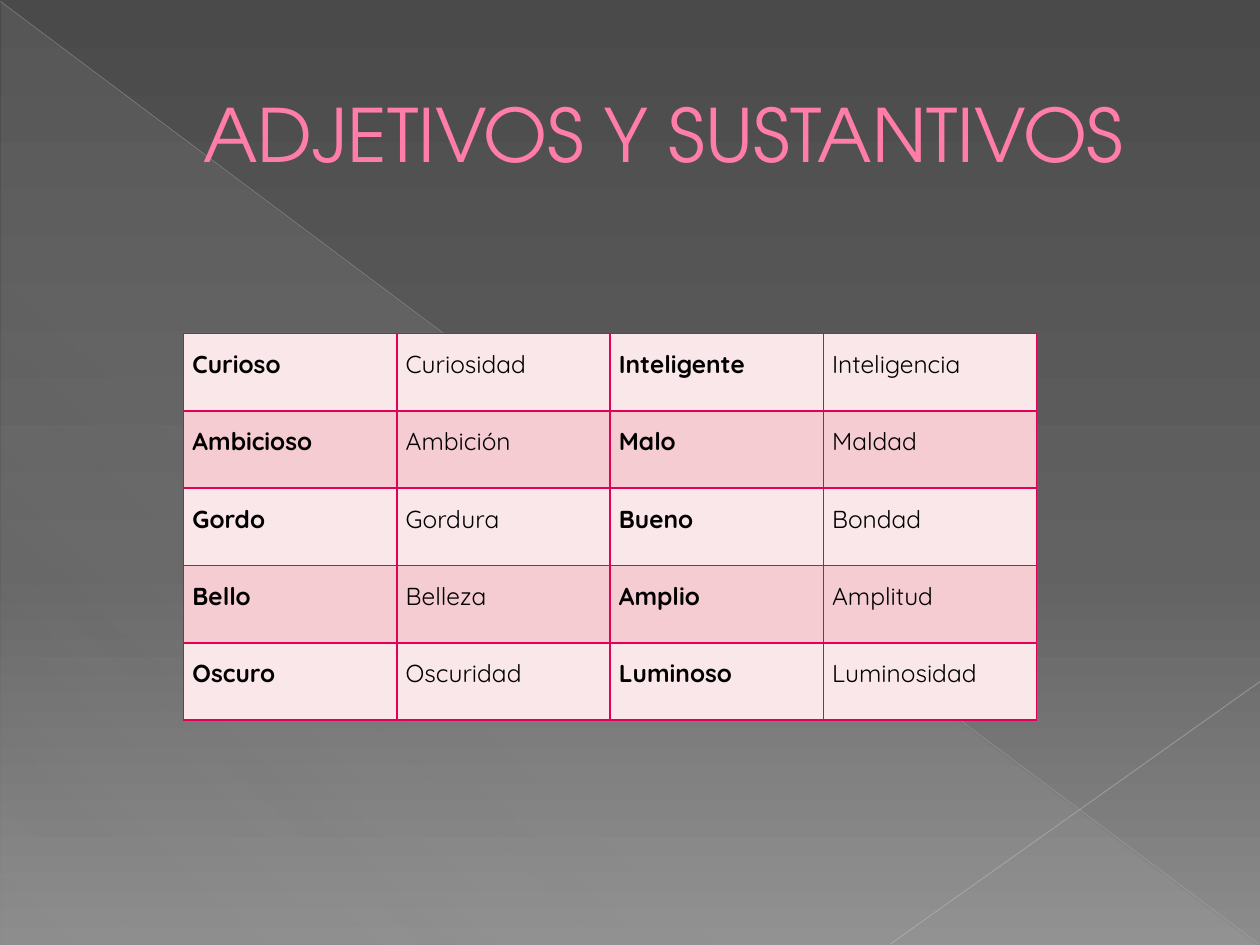
import lxml.etree
import pptx
import pptx.dml.color
import pptx.enum.shapes
import pptx.enum.text
import pptx.oxml.ns
import pptx.util

Pt = pptx.util.Pt
qn = pptx.oxml.ns.qn

WORDS = [
    ["Curioso", "Curiosidad", "Inteligente", "Inteligencia"],
    ["Ambicioso", "Ambición", "Malo", "Maldad"],
    ["Gordo", "Gordura", "Bueno", "Bondad"],
    ["Bello", "Belleza", "Amplio", "Amplitud"],
    ["Oscuro", "Oscuridad", "Luminoso", "Luminosidad"],
]
ROW_FILLS = ["FAE7EA", "F5CCD1"]
BORDER = "E40059"


def color(value):
    return pptx.dml.color.RGBColor.from_string(value)


def add_child(parent, tag, **attributes):
    child = lxml.etree.SubElement(parent, qn(tag))
    for name, value in attributes.items():
        child.set(name, str(value))
    return child


def add_color(parent, value, alpha=100):
    node = add_child(parent, "a:srgbClr", val=value)
    if alpha < 100:
        add_child(node, "a:alpha", val=alpha * 1000)


def set_gradient(fill, owner, stops, angle):
    """Fill with (position %, colour, opacity %) stops, angle clockwise in degrees."""
    fill.gradient()
    gradient = next(owner.iter(qn("a:gradFill")))
    for child in list(gradient):
        gradient.remove(child)
    stop_list = add_child(gradient, "a:gsLst")
    for position, value, alpha in stops:
        add_color(add_child(stop_list, "a:gs", pos=position * 1000), value, alpha)
    add_child(gradient, "a:lin", ang=angle * 60000, scaled=0)


def add_line(page, start, end, value, width, alpha):
    line = page.shapes.add_connector(
        pptx.enum.shapes.MSO_CONNECTOR.STRAIGHT, *map(Pt, start + end))
    line.line.width = Pt(width)
    line.line.color.rgb = color(value)
    properties = line._element.spPr
    add_child(next(properties.iter(qn("a:srgbClr"))), "a:alpha", val=alpha * 1000)
    add_child(properties, "a:effectLst")


def add_backdrop(page, left, top, width, height):
    set_gradient(page.background.fill, page._element,
                 [(0, "4A4A4A", 100), (60, "626262", 100), (100, "8C8C8C", 100)], 90)
    right, bottom = left + width, top + height
    triangle = page.shapes.add_shape(
        pptx.enum.shapes.MSO_SHAPE.RIGHT_TRIANGLE,
        *map(Pt, (left + 0.7, top + 1.2, width - 1.4, height - 1.2)))
    triangle.shadow.inherit = False
    triangle.line.fill.background()
    set_gradient(triangle.fill, triangle._element,
                 [(0, "D2D2D2", 10), (70, "D2D2D2", 8), (100, "D2D2D2", 1)], 133)
    add_line(page, (left, top + 0.7), (right - 0.7, bottom - 0.7), "BFBFBF", 0.39, 35)
    add_line(page, (right, bottom - 150.5), (right - 211, bottom - 0.7), "C6C6C6", 0.47, 45)


def add_title(page, left, top, width, height):
    box = page.shapes.add_textbox(*map(Pt, (left, top, width, height)))
    frame = box.text_frame
    frame.word_wrap = True
    frame.vertical_anchor = pptx.enum.text.MSO_ANCHOR.MIDDLE
    para = frame.paragraphs[0]
    para.alignment = pptx.enum.text.PP_ALIGN.CENTER
    para._p.get_or_add_pPr().set("marL", str(Pt(38.2)))
    span = para.add_run()
    span.text = "ADJETIVOS Y SUSTANTIVOS"
    for name, value in {"size": Pt(42), "name": "TeX Gyre Adventor"}.items():
        setattr(span.font, name, value)
    span.font.color.rgb = color("FF7DA7")
    properties = span._r.get_or_add_rPr()
    outline = add_child(properties, "a:ln", w=Pt(0.5))
    add_color(add_child(outline, "a:solidFill"), "B12761")
    properties.insert(0, outline)


def set_borders(cell):
    properties = cell._tc.get_or_add_tcPr()
    for index, side in enumerate(("a:lnL", "a:lnR", "a:lnT", "a:lnB")):
        border = add_child(properties, side, w=Pt(1))
        add_color(add_child(border, "a:solidFill"), BORDER)
        properties.insert(index, border)


def fill_cell(cell, text, fill, bold):
    margins = {"margin_left": Pt(5), "margin_right": Pt(5),
               "margin_top": 0, "margin_bottom": 0}
    for name, value in margins.items():
        setattr(cell, name, value)
    cell.fill.solid()
    cell.fill.fore_color.rgb = color(fill)
    set_borders(cell)
    para = cell.text_frame.paragraphs[0]
    para.line_spacing = 1.5
    span = para.add_run()
    span.text = text
    for name, value in {"size": Pt(14), "name": "Quicksand", "bold": bold}.items():
        setattr(span.font, name, value)
    span.font.color.rgb = color("000000")


def add_word_table(page, left, top, width, height):
    """Adjectives in bold, each followed by its noun."""
    table = page.shapes.add_table(
        len(WORDS), len(WORDS[0]), *map(Pt, (left, top, width, height))).table
    table.first_row = table.horz_banding = False
    for row, words in enumerate(WORDS):
        for column, word in enumerate(words):
            fill_cell(table.cell(row, column), word, ROW_FILLS[row % 2], column % 2 == 0)


def main():
    deck = pptx.Presentation()
    deck.slide_width, deck.slide_height = Pt(720), Pt(540)
    page = deck.slides.add_slide(deck.slide_layouts[6])
    add_backdrop(page, 0, 0, 720, 540)
    add_title(page, 36, 21, 648, 110)
    add_word_table(page, 105, 190.6, 487.4, 221)
    deck.save("out.pptx")


if __name__ == "__main__":
    main()
